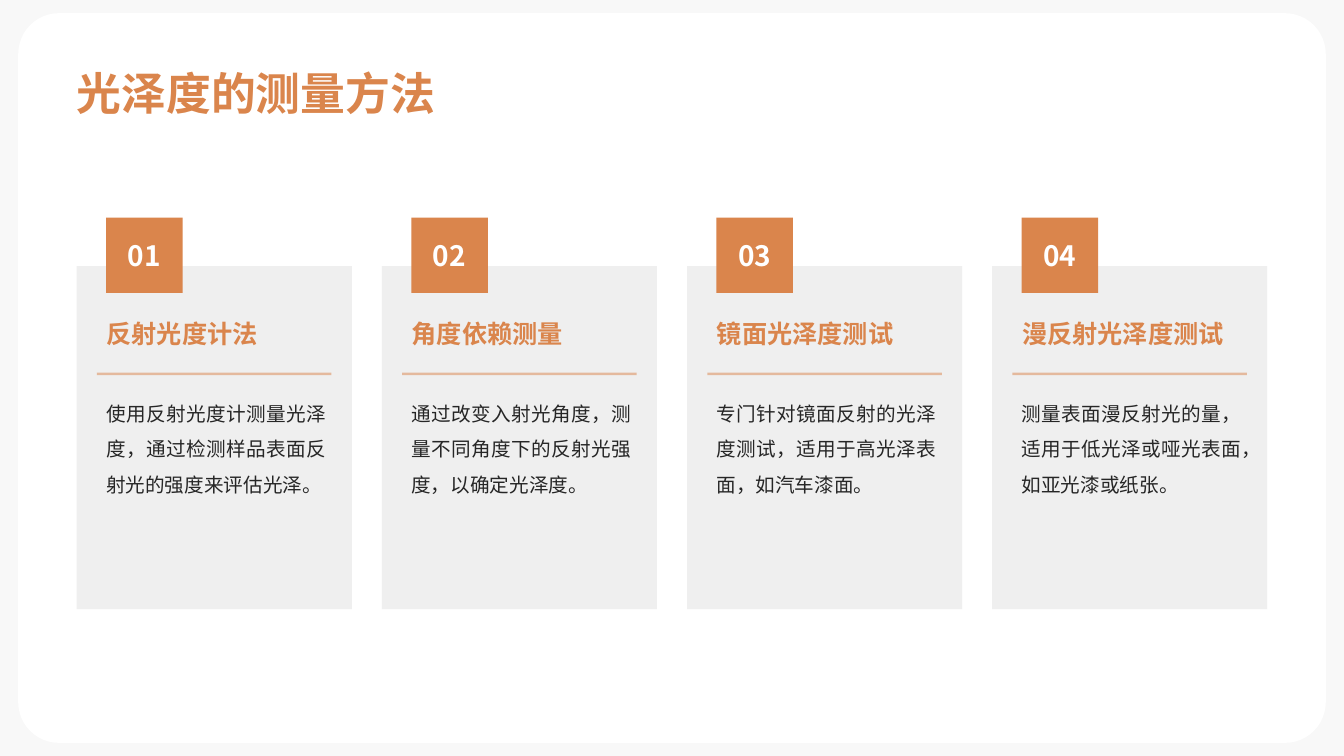
from lxml import etree
from pptx import Presentation
from pptx import util as u
from pptx.dml.color import RGBColor
from pptx.enum import shapes, text
from pptx.oxml.ns import qn

COLORS = {
    "backdrop": "F8F8F8",
    "panel": "FFFFFF",
    "accent": "DA854C",
    "card": "999999",
    "body": "262626",
}
CJK_FONT = "Noto Sans CJK SC"
METHODS = [
    ("反射光度计法", "使用反射光度计测量光泽度，通过检测样品表面反射光的强度来评估光泽。"),
    ("角度依赖测量", "通过改变入射光角度，测量不同角度下的反射光强度，以确定光泽度。"),
    ("镜面光泽度测试", "专门针对镜面反射的光泽度测试，适用于高光泽表面，如汽车漆面。"),
    ("漫反射光泽度测试", "测量表面漫反射光的量，适用于低光泽或哑光表面，如亚光漆或纸张。"),
]


def color(name):
    """Return the named colour."""
    return RGBColor.from_string(COLORS[name])


def set_opacity(element, percent):
    """Make the colour inside an element partly transparent."""
    rgb = next(element.iter(qn("a:srgbClr")))
    etree.SubElement(rgb, qn("a:alpha")).set("val", str(percent * 1000))


def add_block(slide, box, fill, corner=0):
    """Add a filled block without outline or shadow."""
    shape = slide.shapes.add_shape(
        shapes.MSO_SHAPE.ROUNDED_RECTANGLE, *[u.Pt(value) for value in box])
    shape.adjustments[0] = corner
    shape.shadow.inherit = False
    shape.fill.solid()
    shape.fill.fore_color.rgb = color(fill)
    shape.line.fill.background()
    return shape


def write(shape, content, size, ink, bold=True, latin=CJK_FONT, wrap=True,
          anchor=text.MSO_ANCHOR.MIDDLE, align=text.PP_ALIGN.LEFT, spacing=1.0):
    """Fill a shape with one formatted paragraph."""
    frame = shape.text_frame
    frame.margin_left = frame.margin_right = frame.margin_top = frame.margin_bottom = 0
    frame.word_wrap = wrap
    frame.vertical_anchor = anchor
    frame.text = content
    paragraph = frame.paragraphs[0]
    paragraph.alignment = align
    paragraph.line_spacing = spacing
    run = paragraph.runs[0]
    run.font.size = u.Pt(size)
    run.font.bold = bold
    run.font.color.rgb = color(ink)
    run.font.name = latin
    properties = run.font._element
    etree.SubElement(properties, qn("a:ea")).set("typeface", CJK_FONT)


def add_text(slide, box, content, size, ink, **style):
    """Add a text box holding one paragraph."""
    shape = slide.shapes.add_textbox(*[u.Pt(value) for value in box])
    write(shape, content, size, ink, **style)


def add_divider(slide, left, top, width):
    """Add a half-transparent horizontal rule."""
    line = slide.shapes.add_connector(
        shapes.MSO_CONNECTOR.STRAIGHT, u.Pt(left), u.Pt(top), u.Pt(left + width), u.Pt(top))
    line.line.width = u.Pt(1.75)
    line.line.color.rgb = color("accent")
    properties = line._element.spPr
    set_opacity(properties, 50)
    etree.SubElement(properties, qn("a:effectLst"))


def add_backdrop(slide, box):
    """Colour the background and add the rounded panel."""
    slide.background.fill.solid()
    slide.background.fill.fore_color.rgb = color("backdrop")
    add_block(slide, box, "panel", corner=0.056)


def add_card(slide, box, number, heading, description):
    """Add one numbered method card."""
    left, top, width, height = box
    inner, inner_width = left + 21, 157
    card = add_block(slide, box, "card")
    set_opacity(card._element.spPr, 15)
    add_text(slide, (inner, top + 88.8, inner_width, 139), description, 14, "body",
             bold=False, anchor=text.MSO_ANCHOR.TOP,
             align=text.PP_ALIGN.JUSTIFY, spacing=1.5)
    badge = add_block(slide, (inner, top - 34.5, 54.7, 53.6), "accent")
    write(badge, f"{number:02d}", 20, "panel", wrap=False, align=text.PP_ALIGN.CENTER)
    add_divider(slide, left + 14.5, top + 77, width - 29)
    add_text(slide, (inner + 0.3, top + 30.6, inner_width, 34.6), heading, 18, "accent")


def add_cards(slide, box):
    """Spread the method cards evenly over the box."""
    left, top, width, height = box
    gap = 21.5
    card_width = (width - gap * (len(METHODS) - 1)) / len(METHODS)
    for index, (heading, description) in enumerate(METHODS):
        card_left = left + index * (card_width + gap)
        add_card(slide, (card_left, top, card_width, height), index + 1, heading, description)


def main():
    """Build and save the slide."""
    presentation = Presentation()
    presentation.slide_width = u.Pt(960)
    presentation.slide_height = u.Pt(540)
    slide = presentation.slides.add_slide(presentation.slide_layouts[6])
    add_backdrop(slide, (13, 9.4, 934, 521.2))
    add_text(slide, (54.8, 28, 850.4, 57), "光泽度的测量方法", 32, "accent",
             latin="Arial", anchor=text.MSO_ANCHOR.BOTTOM)
    add_cards(slide, (54.8, 190, 850.4, 245))
    presentation.save("out.pptx")


if __name__ == "__main__":
    main()
